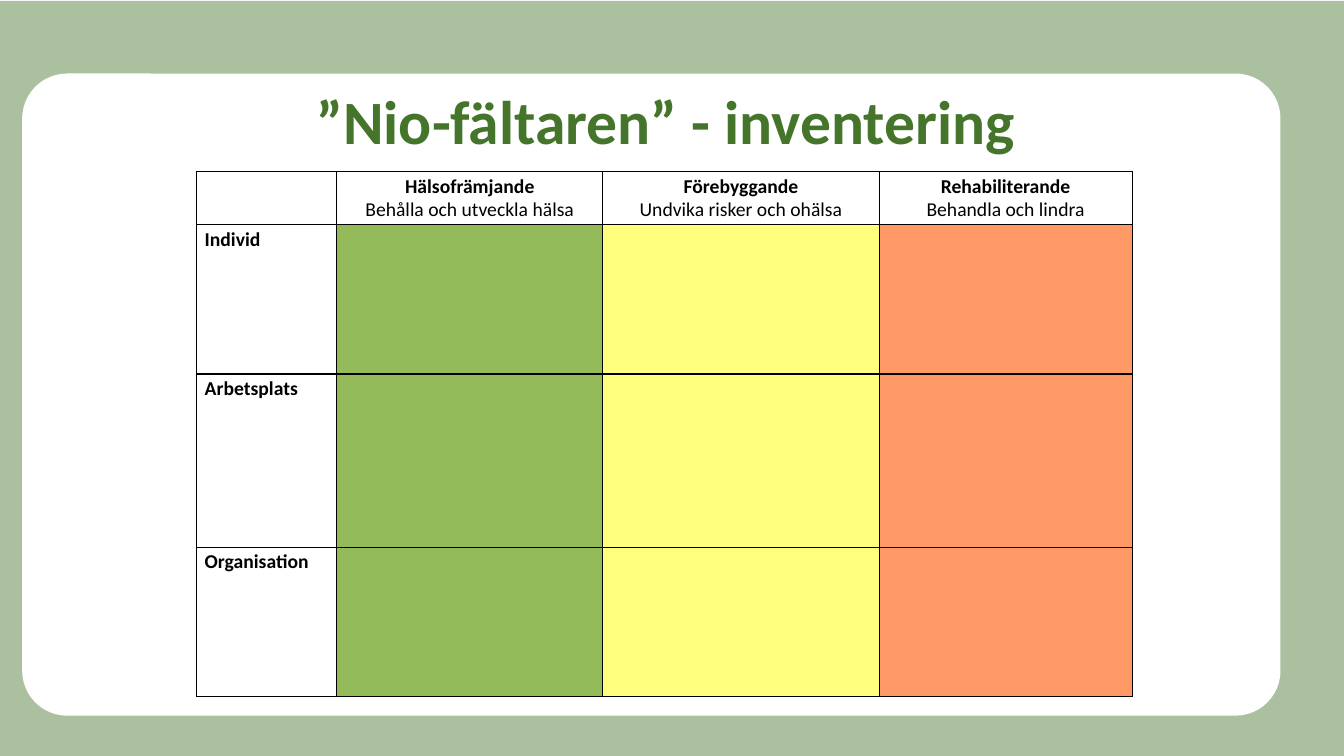
"""Build the nine-field inventory slide."""
from dataclasses import dataclass
from lxml.etree import SubElement as Sub
from pptx import Presentation as Deck
from pptx.dml.color import RGBColor as Rgb
from pptx.enum.shapes import MSO_SHAPE as Shape
from pptx.enum.text import PP_ALIGN as Align
from pptx.oxml.ns import qn
from pptx.util import Inches, Pt

TITLE = "”Nio-fältaren” - inventering"
HEADS = [
    ("Hälsofrämjande", "Behålla och utveckla hälsa"),
    ("Förebyggande", "Undvika risker och ohälsa"),
    ("Rehabiliterande", "Behandla och lindra"),
]
LEVELS = ["Individ", "Arbetsplats", "Organisation"]
COLS = [1.39, 2.64, 2.74, 2.51]
ROWS = [0.53, 1.48, 1.72, 1.48]


@dataclass(frozen=True)
class Theme:
    font: str = "Calibri"
    back: str = "44752A"
    panel: str = "FFFFFF"
    title: str = "45752B"
    ink: str = "000000"
    fields: tuple = ("93BB59", "FFFF7D", "FF9966")
    big: int = 44
    small: int = 14


THEME = Theme()


def write(para, text, size=THEME.small, color=THEME.ink, bold=False, align=Align.LEFT):
    para.alignment = align
    run = para.add_run()
    run.text = text
    font = run.font
    font.name, font.size, font.bold = THEME.font, Pt(size), bold
    font.color.rgb = Rgb.from_string(color)


def block(slide, kind, place, color):
    shape = slide.shapes.add_shape(kind, *map(Inches, place))
    shape.shadow.inherit = False
    shape.fill.solid()
    shape.fill.fore_color.rgb = Rgb.from_string(color)
    shape.line.fill.background()
    return shape


def border(cell):
    props = cell._tc.get_or_add_tcPr()
    for i, side in enumerate(("lnL", "lnR", "lnT", "lnB")):
        line = props.makeelement(qn(f"a:{side}"), {"w": str(Pt(1))})
        fill = Sub(line, qn("a:solidFill"))
        Sub(fill, qn("a:srgbClr"), val=THEME.ink)
        props.insert(i, line)


def grid(slide):
    place = map(Inches, (1.95, 1.7, sum(COLS), sum(ROWS)))
    table = slide.shapes.add_table(len(ROWS), len(COLS), *place).table
    table.first_row = table.horz_banding = False
    for col, width in zip(table.columns, COLS):
        col.width = Inches(width)
    for row, height in zip(table.rows, ROWS):
        row.height = Inches(height)
    for r in range(len(ROWS)):
        for c in range(len(COLS)):
            cell = table.cell(r, c)
            cell.margin_left = cell.margin_right = Inches(0.08)
            cell.margin_top = cell.margin_bottom = Inches(0.03)
            if r and c:
                cell.fill.solid()
                cell.fill.fore_color.rgb = Rgb.from_string(THEME.fields[c - 1])
            else:
                cell.fill.background()
            border(cell)
    for c, (head, aim) in enumerate(HEADS, 1):
        frame = table.cell(0, c).text_frame
        write(frame.paragraphs[0], head, bold=True, align=Align.CENTER)
        write(frame.add_paragraph(), aim, align=Align.CENTER)
    for r, level in enumerate(LEVELS, 1):
        write(table.cell(r, 0).text_frame.paragraphs[0], level, bold=True)


def main():
    deck = Deck()
    deck.slide_width, deck.slide_height = Inches(13.33), Inches(7.5)
    slide = deck.slides.add_slide(deck.slide_layouts[6])
    back = block(slide, Shape.RECTANGLE, (0, 0.01, 13.33, 7.49), THEME.back)
    tint = back._element.spPr.find(qn("a:solidFill"))[0]
    Sub(tint, qn("a:alpha"), val="45000")
    panel = block(slide, Shape.ROUNDED_RECTANGLE, (0.22, 0.73, 12.48, 6.37), THEME.panel)
    panel.adjustments[0] = 0.07
    box = slide.shapes.add_textbox(*map(Inches, (0.09, 0.86, 13.03, 1.45)))
    box.text_frame.word_wrap = True
    para = box.text_frame.paragraphs[0]
    para.line_spacing = 0.9
    write(para, TITLE, size=THEME.big, color=THEME.title, bold=True, align=Align.CENTER)
    grid(slide)
    deck.save("out.pptx")


if __name__ == "__main__":
    main()
